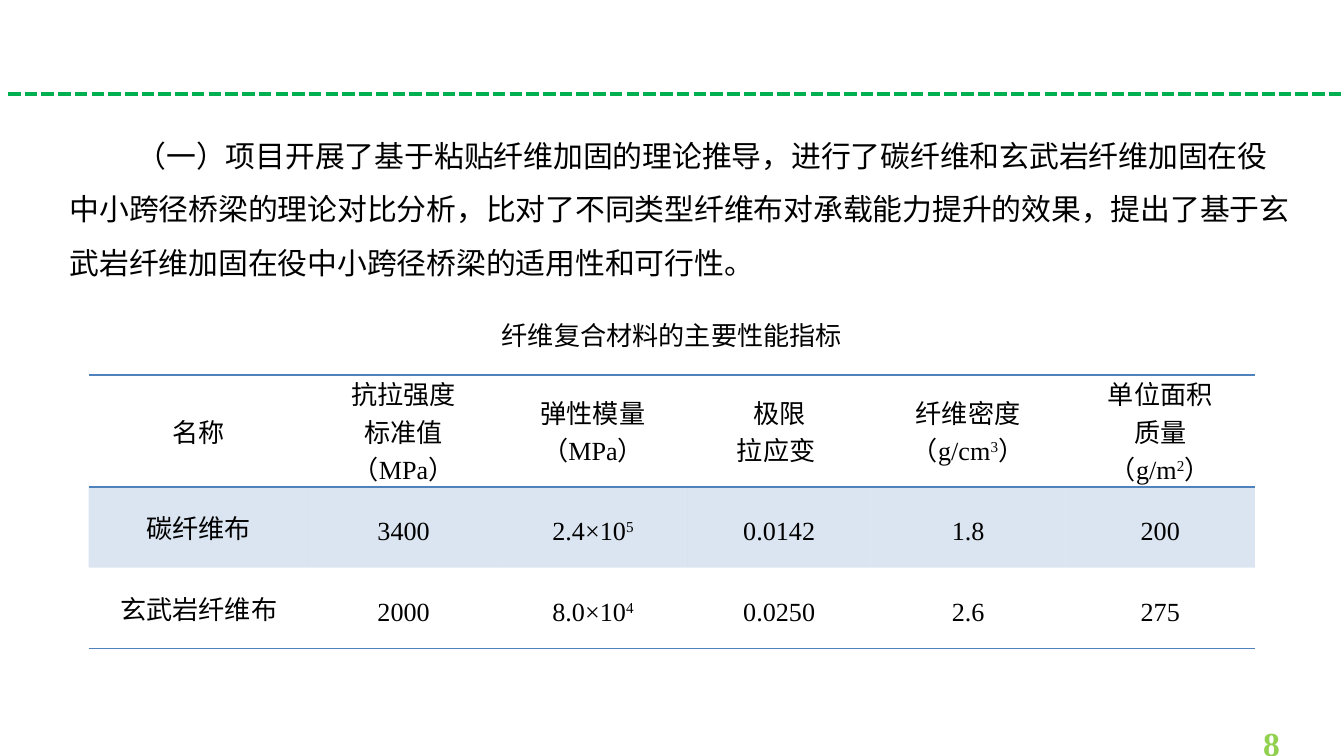
"""Build the slide on fibre composite properties for bridge strengthening."""
from lxml.etree import SubElement
from pptx import Presentation
from pptx.dml.color import RGBColor
from pptx.enum.dml import MSO_LINE
from pptx.enum.shapes import MSO_CONNECTOR
from pptx.enum.text import MSO_ANCHOR as ANCHOR, PP_ALIGN as ALIGN
from pptx.oxml.ns import qn
from pptx.util import Pt


def color(value):
    return RGBColor.from_string(value)


def write(frame, text, font, layout):
    frame.word_wrap = True
    for i, line in enumerate(text.split("\n")):
        paragraph = frame.paragraphs[0] if i == 0 else frame.add_paragraph()
        for key, value in layout.items():
            setattr(paragraph, key, value)
        for j, part in enumerate(line.split("^")):
            if not part:
                continue
            run = paragraph.add_run()
            run.text = part
            for key, value in font.items():
                setattr(run.font, key, value)
            run.font.color.rgb = color("92D050" if font.get("bold") else "000000")
            props = run._r.get_or_add_rPr()
            SubElement(props, qn("a:ea")).set("typeface", "Noto Sans CJK SC")
            if j % 2:
                props.set("baseline", "30000")


deck = Presentation()
deck.slide_width, deck.slide_height = Pt(720), Pt(405)
slide = deck.slides.add_slide(deck.slide_layouts[6])
shapes = slide.shapes

divider = shapes.add_connector(MSO_CONNECTOR.STRAIGHT, Pt(4.3), Pt(50.4), Pt(720), Pt(50.4))
divider.line.color.rgb = color("00B050")
divider.line.width = Pt(2.25)
divider.line.dash_style = MSO_LINE.SQUARE_DOT
SubElement(divider._element.spPr, qn("a:effectLst"))

body_font = {"size": Pt(16), "name": "Noto Sans CJK SC"}
table_font = {"size": Pt(14), "name": "Times New Roman"}
page_font = {"size": Pt(18), "name": "Times New Roman", "bold": True}
centred = {"alignment": ALIGN.CENTER, "line_spacing": Pt(20)}

page_number = shapes.add_textbox(Pt(669.6), Pt(383.8), Pt(49), Pt(21.6))
write(page_number.text_frame, "8", page_font, {})

summary = shapes.add_textbox(Pt(30.2), Pt(60.5), Pt(669.6), Pt(91.4))
write(
    summary.text_frame,
    "（一）项目开展了基于粘贴纤维加固的理论推导，进行了碳纤维和玄武岩纤维加固在役"
    "中小跨径桥梁的理论对比分析，比对了不同类型纤维布对承载能力提升的效果，"
    "提出了基于玄武岩纤维加固在役中小跨径桥梁的适用性和可行性。",
    body_font,
    {"line_spacing": 1.5},
)
summary.text_frame.paragraphs[0]._p.get_or_add_pPr().set("indent", str(Pt(36)))

rows = [
    ["名称", "抗拉强度\n标准值\n（MPa）", "弹性模量\n（MPa）", "极限\n拉应变 ",
     "纤维密度\n（g/cm^3^）", "单位面积\n质量\n（g/m^2^）"],
    ["碳纤维布", "3400", "2.4×10^5^", "0.0142", "1.8", "200"],
    ["玄武岩纤维布", "2000", "8.0×10^4^", "0.0250", "2.6", "275"],
]
row_heights = [60, 43.2, 43.2]
column_widths = [118, 101.5, 101.5, 98, 104.4, 101.5]
row_borders = [("a:lnT", "a:lnB"), (), ("a:lnB",)]
cell_format = {
    "vertical_anchor": ANCHOR.MIDDLE,
    "margin_left": Pt(5), "margin_right": Pt(5),
    "margin_top": 0, "margin_bottom": 0,
}

properties = shapes.add_table(3, 6, Pt(47.5), Pt(200.9), Pt(625), Pt(146.4)).table
properties.first_row = properties.horz_banding = False
style = properties._tbl.tblPr.find(qn("a:tableStyleId"))
style.text = "{2D5ABB26-0587-4C30-8999-92F81FD0307C}"
for column, width in zip(properties.columns, column_widths):
    column.width = Pt(width)

for r, values in enumerate(rows):
    properties.rows[r].height = Pt(row_heights[r])
    for c, value in enumerate(values):
        cell = properties.cell(r, c)
        for key, setting in cell_format.items():
            setattr(cell, key, setting)
        write(cell.text_frame, value, table_font, centred)
        cell_props = cell._tc.get_or_add_tcPr()
        for side in row_borders[r]:
            border = SubElement(cell_props, qn(side), w=str(Pt(1)))
            paint = SubElement(border, qn("a:solidFill"))
            SubElement(paint, qn("a:srgbClr"), val="4F81BD")
        if r == 1:
            cell.fill.solid()
            cell.fill.fore_color.rgb = color("4F81BD")
            tint = cell_props.find(".//" + qn("a:srgbClr"))
            SubElement(tint, qn("a:alpha"), val="20000")
        else:
            cell.fill.background()

caption = shapes.add_textbox(Pt(47.5), Pt(164.2), Pt(625), Pt(26))
write(caption.text_frame, "纤维复合材料的主要性能指标", table_font, centred)

deck.save("out.pptx")
